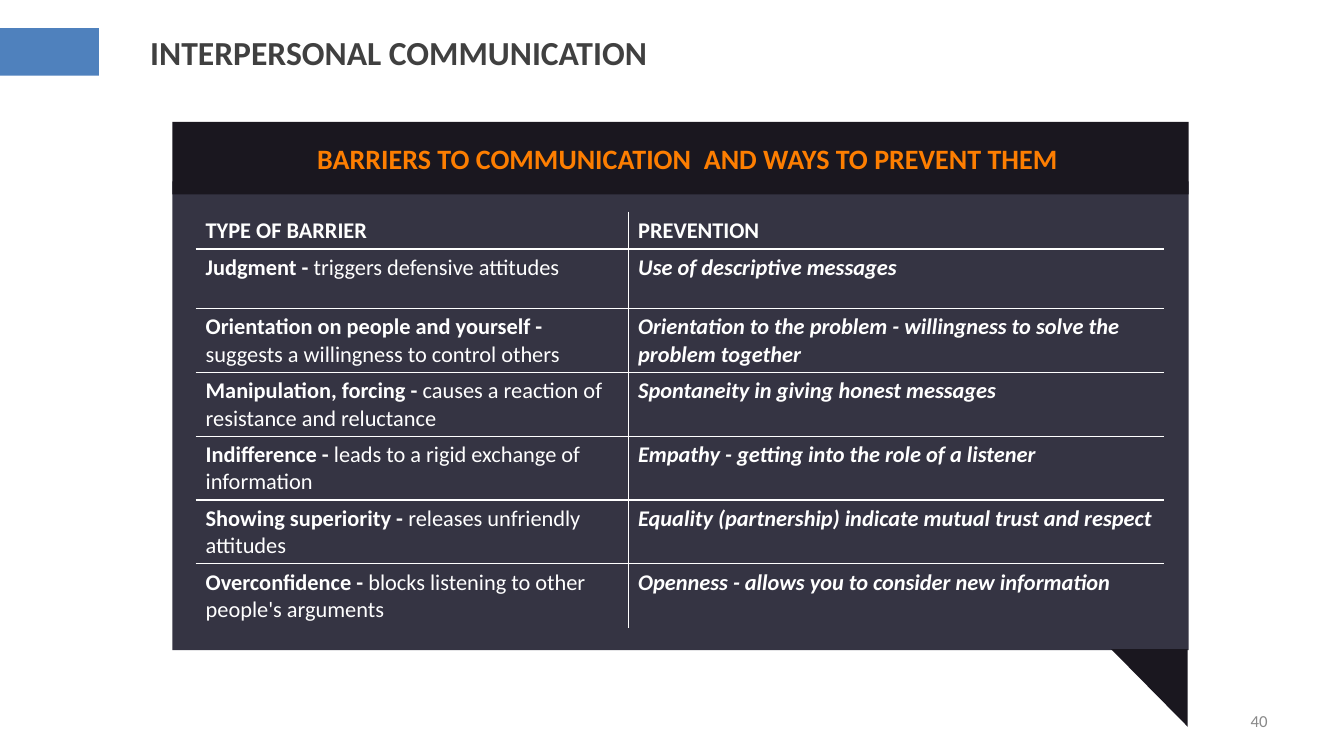
from dataclasses import dataclass

from lxml import etree
from pptx import Presentation
from pptx.dml.color import RGBColor
from pptx.enum.shapes import MSO_SHAPE
from pptx.enum.text import MSO_ANCHOR, PP_ALIGN
from pptx.oxml.ns import qn
from pptx.util import Inches, Pt

RECT = MSO_SHAPE.RECTANGLE
FOLD = MSO_SHAPE.RIGHT_TRIANGLE
MIDDLE = MSO_ANCHOR.MIDDLE
LEFT, CENTER, RIGHT = PP_ALIGN.LEFT, PP_ALIGN.CENTER, PP_ALIGN.RIGHT


@dataclass(frozen=True)
class Theme:
    font: str = "Calibri"
    blue: str = "4F81BD"
    title: str = "404040"
    gray: str = "898989"
    panel: str = "353443"
    dark: str = "1A171F"
    orange: str = "FD7E01"
    white: str = "FFFFFF"
    title_size: int = 24
    head_size: int = 20
    body_size: int = 16
    num_size: int = 12


THEME = Theme()

HEADER = ("TYPE OF BARRIER", "PREVENTION")
BARRIERS = [
    ("Judgment - ", "triggers defensive attitudes",
     "Use of descriptive messages"),
    ("Orientation on people and yourself -",
     " suggests a willingness to control others",
     "Orientation to the problem - willingness to solve the problem together"),
    ("Manipulation, forcing - ",
     "causes a reaction of resistance and reluctance",
     "Spontaneity in giving honest messages"),
    ("Indifference - ", "leads to a rigid exchange of information",
     "Empathy - getting into the role of a listener"),
    ("Showing superiority - ", "releases unfriendly attitudes",
     "Equality (partnership) indicate mutual trust and respect"),
    ("Overconfidence - ", "blocks listening to other people's arguments",
     "Openness - allows you to consider new information"),
]
COL_WIDTHS = (4.29, 5.32)
ROW_HEIGHTS = (0.37, 0.59) + (0.63,) * 5


def style(font, size, color, bold=False, italic=False):
    font.name = THEME.font
    font.size = Pt(size)
    font.color.rgb = RGBColor.from_string(color)
    font.bold = bold
    font.italic = italic


def add_block(shapes, kind, box, color):
    block = shapes.add_shape(kind, *map(Inches, box))
    block.shadow.inherit = False
    block.fill.solid()
    block.fill.fore_color.rgb = RGBColor.from_string(color)
    block.line.fill.background()
    return block


def set_text(shape, text, align, size, color, bold=False):
    frame = shape.text_frame
    frame.word_wrap = True
    frame.vertical_anchor = MIDDLE
    frame.text = text
    para = frame.paragraphs[0]
    para.alignment = align
    style(para.runs[0].font, size, color, bold)


def add_title(slide, text, box):
    title = slide.shapes.title
    title.left, title.top, title.width, title.height = map(Inches, box)
    set_text(title, text, LEFT, THEME.title_size, THEME.title, True)


def add_label(slide, text, box, *look):
    set_text(slide.shapes.add_textbox(*map(Inches, box)), text, *look)


def add_panel(slide):
    shapes = slide.shapes.add_group_shape().shapes
    add_block(shapes, RECT, (1.71, 1.8, 10.08, 4.65), THEME.panel)
    add_block(shapes, RECT, (1.71, 1.21, 10.08, 0.72), THEME.dark)
    fold = add_block(shapes, FOLD, (11.02, 6.44, 0.76, 0.77), THEME.dark)
    fold.rotation = 180


def set_borders(cell, sides):
    """Draw white lines on the named sides (L, R, T, B) and clear the rest."""
    props = cell._tc.get_or_add_tcPr()
    for side in "LRTB":
        line = etree.SubElement(props, qn(f"a:ln{side}"), w=str(Pt(1)))
        if side in sides:
            fill = etree.SubElement(line, qn("a:solidFill"))
            etree.SubElement(fill, qn("a:srgbClr"), val=THEME.white)
        else:
            etree.SubElement(line, qn("a:noFill"))


def fill_cell(cell, parts):
    """Write (text, bold, italic) parts as the runs of one paragraph."""
    para = cell.text_frame.paragraphs[0]
    for text, bold, italic in parts:
        run = para.add_run()
        run.text = text
        style(run.font, THEME.body_size, THEME.white, bold, italic)


def add_table(slide, left, top):
    rows = [[[(text, True, False)] for text in HEADER]]
    for name, effect, remedy in BARRIERS:
        rows.append([[(name, True, False), (effect, False, False)],
                     [(remedy, True, True)]])
    size = (sum(COL_WIDTHS), sum(ROW_HEIGHTS))
    table = slide.shapes.add_table(
        len(rows), len(HEADER), *map(Inches, (left, top, *size))).table
    table.first_row = table.horz_banding = False
    for col, width in zip(table.columns, COL_WIDTHS):
        col.width = Inches(width)
    for row, height in zip(table.rows, ROW_HEIGHTS):
        row.height = Inches(height)
    last = len(rows) - 1
    for i, row in enumerate(rows):
        for j, parts in enumerate(row):
            cell = table.cell(i, j)
            fill_cell(cell, parts)
            sides = "RL"[j] + "T" * (i > 0) + "B" * (i < last)
            set_borders(cell, sides)
            cell.fill.background()


def main():
    deck = Presentation()
    deck.slide_width, deck.slide_height = Inches(13.33), Inches(7.5)
    slide = deck.slides.add_slide(deck.slide_layouts[5])
    add_block(slide.shapes, RECT, (0, 0.28, 0.98, 0.47), THEME.blue)
    add_title(slide, "INTERPERSONAL COMMUNICATION", (1.39, 0.21, 10.55, 0.62))
    add_label(slide, "40", (9.56, 6.95, 3.11, 0.4),
              RIGHT, THEME.num_size, THEME.gray)
    add_panel(slide)
    add_label(slide, "BARRIERS TO COMMUNICATION  AND WAYS TO PREVENT THEM",
              (2.07, 1.35, 9.5, 0.44),
              CENTER, THEME.head_size, THEME.orange, True)
    add_table(slide, 1.94, 2.1)
    deck.save("out.pptx")


if __name__ == "__main__":
    main()
